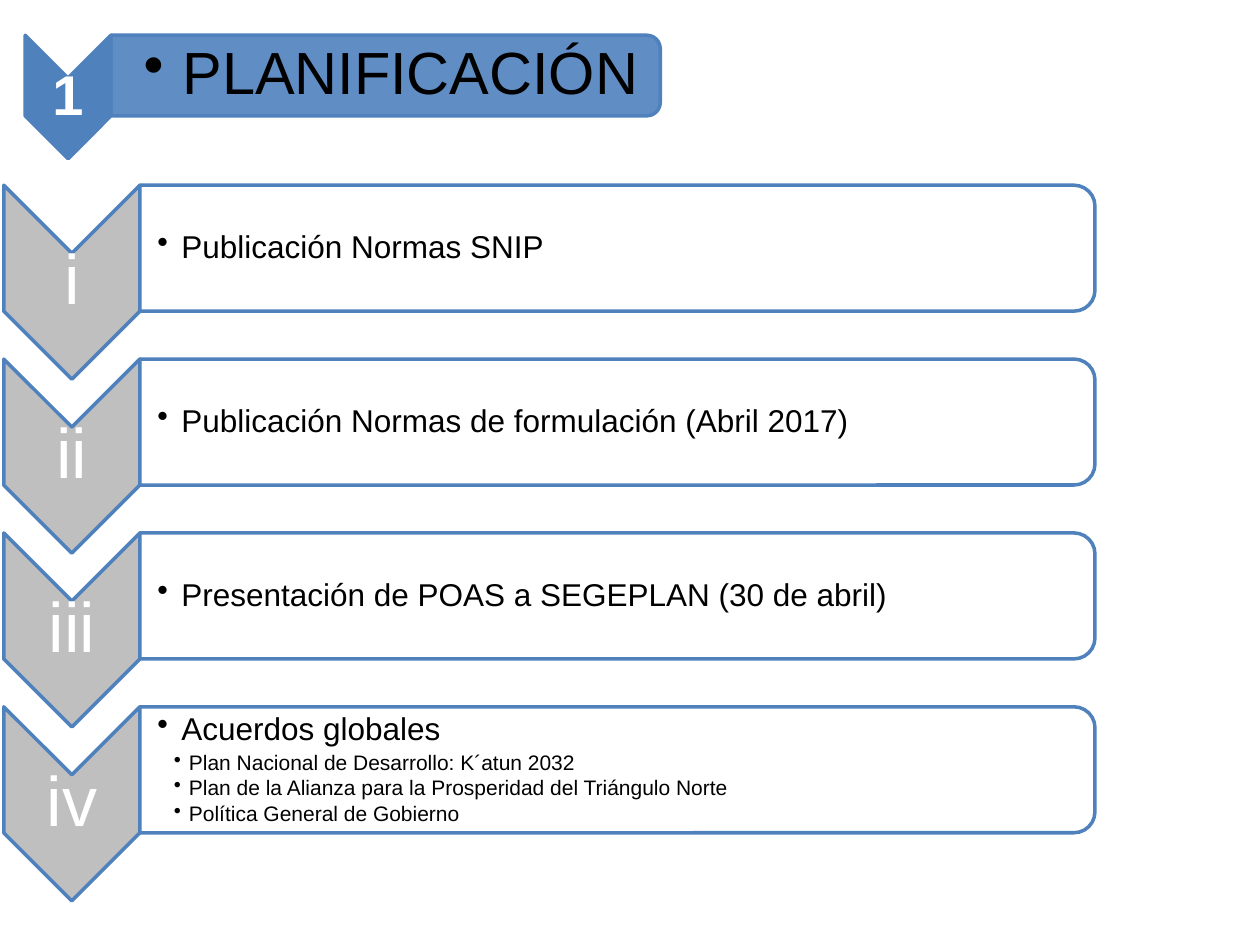
from dataclasses import dataclass

from lxml import etree
from pptx import Presentation
from pptx.dml.color import RGBColor
from pptx.enum.shapes import MSO_SHAPE
from pptx.enum.text import MSO_ANCHOR, PP_ALIGN
from pptx.oxml.ns import qn
from pptx.util import Inches, Pt

CHEVRON = MSO_SHAPE.CHEVRON
ROUNDED_BAR = MSO_SHAPE.ROUND_2_SAME_RECTANGLE
MIDDLE = MSO_ANCHOR.MIDDLE
CENTER = PP_ALIGN.CENTER


@dataclass(frozen=True)
class Theme:
    font: str = "Arial"
    blue: str = "4F81BD"
    gray: str = "BFBFBF"
    white: str = "FFFFFF"
    black: str = "000000"
    line_width: float = 2
    detail_size: int = 12


@dataclass(frozen=True)
class StepStyle:
    chevron_width: float
    chevron_height: float
    bar_width: float
    chevron_fill: str
    bar_fill: str
    label_size: int
    label_bold: bool
    label_inset: float
    text_size: int
    text_inset: float
    text_margin: float
    bullet_indent: float


THEME = Theme()
HEADER = StepStyle(0.68, 0.98, 4.36, THEME.blue, THEME.blue,
                   32, True, 0.02, 34, 0.26, 0.02, 0.31)
STEP = StepStyle(1.08, 1.54, 7.58, THEME.gray, THEME.white,
                 40, False, 0.03, 18, 0.14, 0.01, 0.19)
STEP_LEFT, STEP_TOP, STEP_PITCH = 0.03, 1.47, 1.38
DETAIL_INDENT, DETAIL_HANGING = 0.25, 0.12
STEPS = [
    ("i", "Publicación Normas SNIP", []),
    ("ii", "Publicación Normas de formulación (Abril 2017)", []),
    ("iii", "Presentación de POAS a SEGEPLAN (30 de abril)", []),
    ("iv", "Acuerdos globales", [
        "Plan Nacional de Desarrollo: K´atun 2032",
        "Plan de la Alianza para la Prosperidad del Triángulo Norte",
        "Política General de Gobierno",
    ]),
]


def add_turned_shape(group, kind, left, top, width, height, fill, alpha=100):
    shape = group.shapes.add_shape(
        kind,
        Inches(left + (width - height) / 2), Inches(top + (height - width) / 2),
        Inches(height), Inches(width))
    shape.rotation = 90
    shape.shadow.inherit = False
    shape.fill.solid()
    shape.fill.fore_color.rgb = RGBColor.from_string(fill)
    if alpha < 100:
        color = shape.fill._xPr.find(".//" + qn("a:srgbClr"))
        etree.SubElement(color, qn("a:alpha"), val=str(alpha * 1000))
    shape.line.color.rgb = RGBColor.from_string(THEME.blue)
    shape.line.width = Pt(THEME.line_width)


def add_text_frame(group, left, top, width, height, left_inset, inset):
    box = group.shapes.add_textbox(
        Inches(left), Inches(top), Inches(width), Inches(height))
    text_frame = box.text_frame
    text_frame.word_wrap = True
    text_frame.vertical_anchor = MIDDLE
    text_frame.margin_left = Inches(left_inset)
    text_frame.margin_top = text_frame.margin_right = Inches(inset)
    text_frame.margin_bottom = Inches(inset)
    return text_frame


def format_paragraph(paragraph, size, color, space_after, bold=False):
    paragraph.line_spacing = 0.9
    properties = paragraph._p.get_or_add_pPr()
    spacing = etree.SubElement(properties, qn("a:spcAft"))
    etree.SubElement(spacing, qn("a:spcPct"), val=str(space_after * 1000))
    for run in paragraph.runs:
        run.font.name = THEME.font
        run.font.size = Pt(size)
        run.font.bold = bold
        run.font.color.rgb = RGBColor.from_string(color)


def format_bullet(paragraph, level, size, indent, hanging):
    paragraph.level = level
    format_paragraph(paragraph, size, THEME.black, 15)
    properties = paragraph._p.get_or_add_pPr()
    properties.set("marL", str(Inches(indent)))
    properties.set("indent", str(-Inches(hanging)))
    etree.SubElement(properties, qn("a:buChar"), char="•")


def add_label(group, left, top, style, label):
    width = style.chevron_width
    text_frame = add_text_frame(
        group, left, top + width / 2, width, style.chevron_height - width,
        style.label_inset, style.label_inset)
    text_frame.text = label
    paragraph = text_frame.paragraphs[0]
    paragraph.alignment = CENTER
    format_paragraph(paragraph, style.label_size, THEME.white, 35, style.label_bold)


def add_bullets(group, left, top, height, style, title, details):
    inset = height * 0.05
    text_frame = add_text_frame(
        group, left, top + inset, style.bar_width - 0.04, height - 2 * inset,
        style.text_inset, style.text_margin)
    text_frame.text = "\n".join([title, *details])
    first, *others = text_frame.paragraphs
    format_bullet(first, 1, style.text_size, style.bullet_indent, style.bullet_indent)
    for paragraph in others:
        format_bullet(paragraph, 2, THEME.detail_size, DETAIL_INDENT, DETAIL_HANGING)


def add_step(group, left, top, style, label, title, details):
    bar_left = left + style.chevron_width
    bar_height = style.chevron_height - style.chevron_width / 2
    add_turned_shape(group, CHEVRON, left, top, style.chevron_width,
                     style.chevron_height, style.chevron_fill)
    add_label(group, left, top, style, label)
    add_turned_shape(group, ROUNDED_BAR, bar_left, top, style.bar_width,
                     bar_height, style.bar_fill, 90)
    add_bullets(group, bar_left, top, bar_height, style, title, details)


def main():
    presentation = Presentation()
    presentation.slide_width = Inches(10)
    presentation.slide_height = Inches(7.5)
    slide = presentation.slides.add_slide(presentation.slide_layouts[6])
    header_group = slide.shapes.add_group_shape()
    add_step(header_group, 0.2, 0.28, HEADER, "1", "PLANIFICACIÓN", [])
    steps_group = slide.shapes.add_group_shape()
    for index, (label, title, details) in enumerate(STEPS):
        add_step(steps_group, STEP_LEFT, STEP_TOP + index * STEP_PITCH,
                 STEP, label, title, details)
    presentation.save("out.pptx")


if __name__ == "__main__":
    main()
